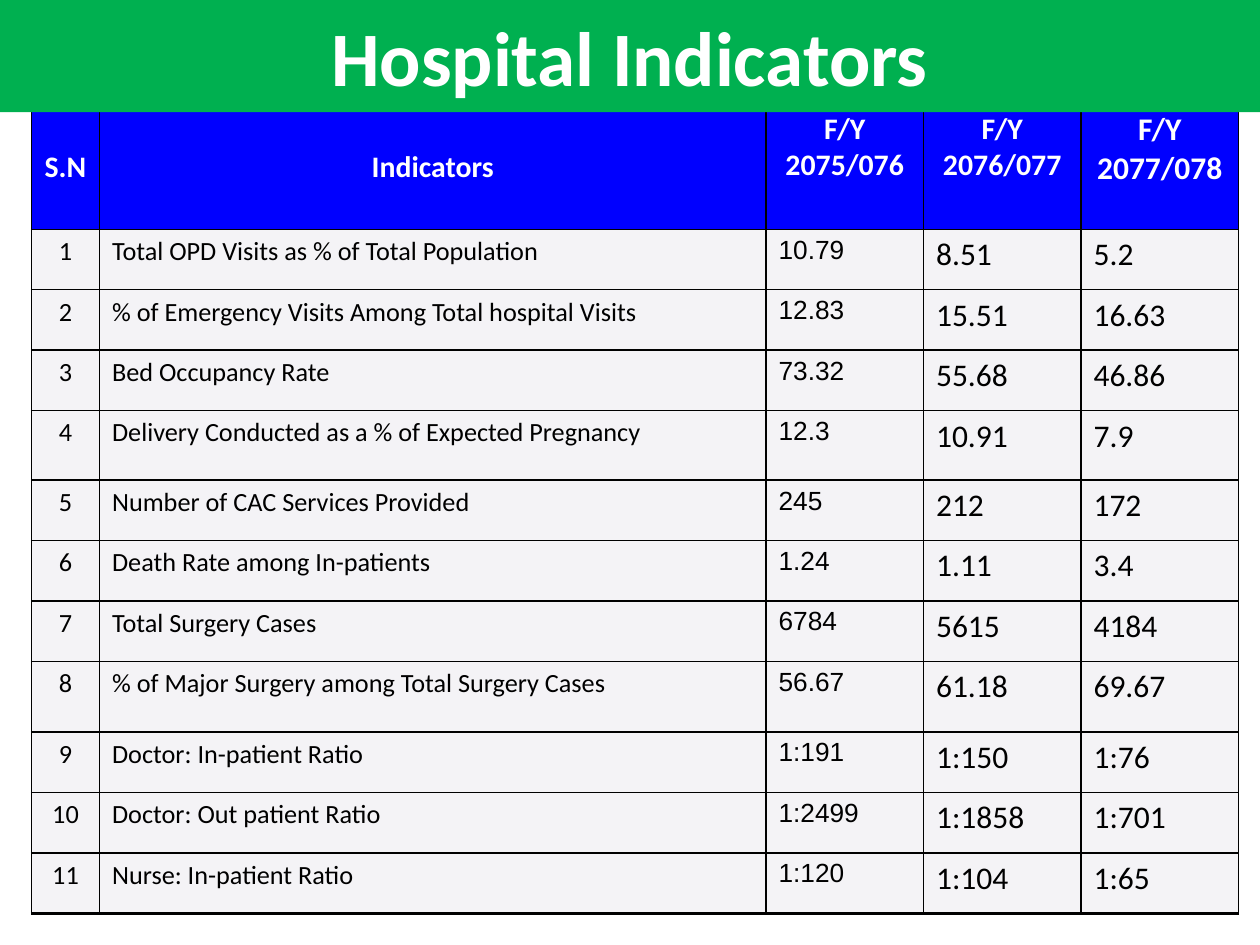
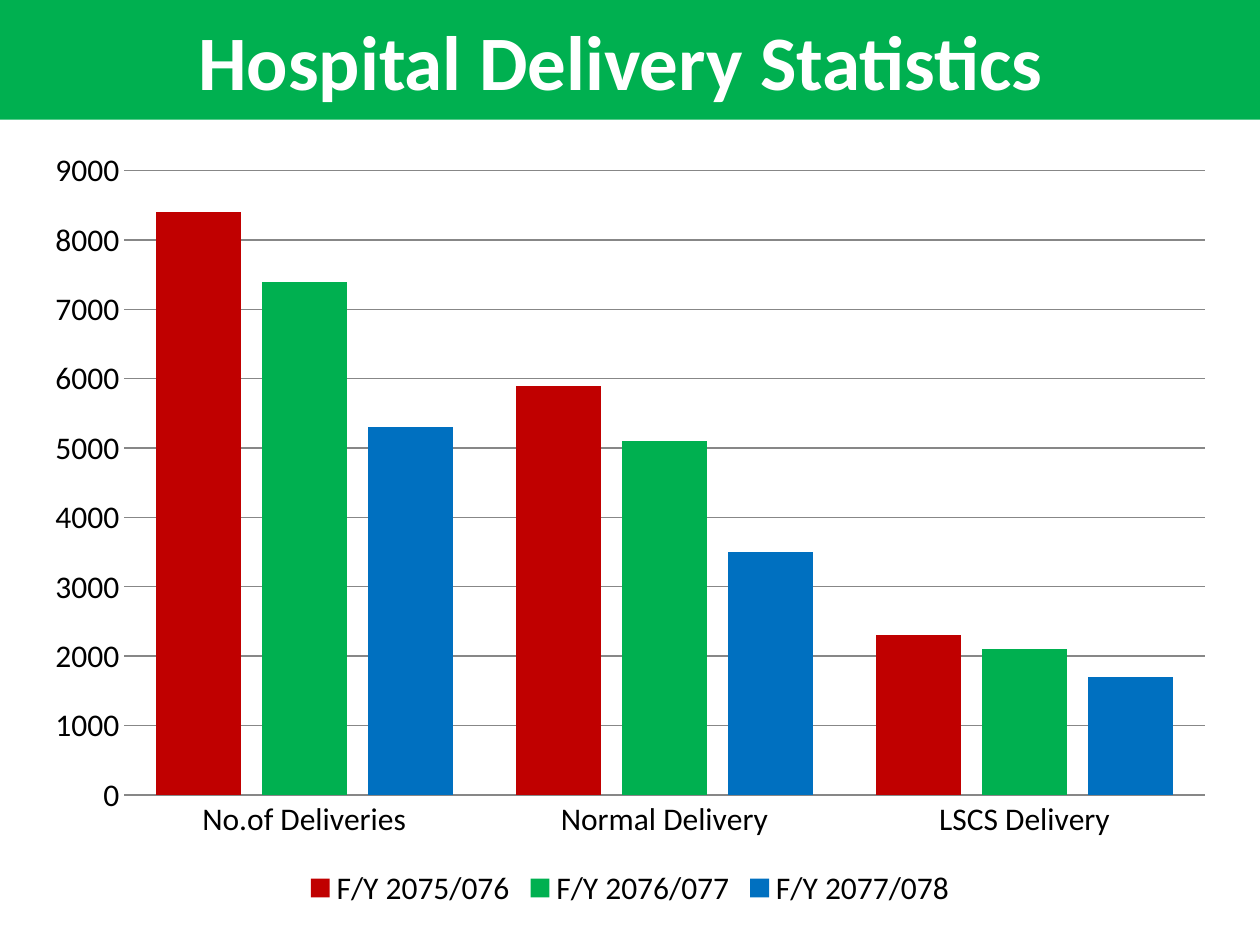
from pptx import Presentation
from pptx.chart.data import CategoryChartData
from pptx.dml.color import RGBColor
from pptx.enum.chart import XL_CHART_TYPE as ChartType
from pptx.enum.chart import XL_LEGEND_POSITION as LegendPosition
from pptx.enum.chart import XL_TICK_MARK as TickMark
from pptx.enum.text import MSO_ANCHOR as Anchor
from pptx.enum.text import MSO_AUTO_SIZE as AutoSize
from pptx.enum.text import PP_ALIGN as Align
from pptx.oxml import parse_xml
from pptx.oxml.ns import nsdecls
from pptx.util import Inches, Pt

# Shared look
GREEN, BLUE, PALE = "00B050", "0000FF", "F4F3F6"
WHITE, BLACK, GRID = "FFFFFF", "000000", "878787"
YEARS = ["2075/076", "2076/077", "2077/078"]
TITLE = {"name": "Calibri", "size": Pt(44), "bold": True, "color": WHITE}
HEADER = {"name": "Calibri", "size": Pt(17), "bold": True, "color": WHITE}
LABEL = {"name": "Calibri", "size": Pt(15), "bold": False, "color": BLACK}
VALUE = {**LABEL, "size": Pt(18)}


def rgb(color):
    return RGBColor.from_string(color)


def set_font(font, formats):
    for name, value in formats.items():
        if name == "color":
            font.color.rgb = rgb(value)
        else:
            setattr(font, name, value)


deck = Presentation()
deck.slide_width, deck.slide_height = Inches(10), Inches(7.5)

# Slides with a green title band
pages = []
for heading, height in [("Hospital Indicators", 0.89), ("Hospital Delivery Statistics ", 0.95)]:
    page = deck.slides.add_slide(deck.slide_layouts[5])
    band = page.shapes.title
    band.left, band.top, band.width, band.height = 0, 0, Inches(10), Inches(height)
    band.fill.solid()
    band.fill.fore_color.rgb = rgb(GREEN)
    frame = band.text_frame
    frame.text = heading
    frame.auto_size = AutoSize.NONE
    frame.vertical_anchor = Anchor.MIDDLE
    para = frame.paragraphs[0]
    para.alignment = Align.CENTER
    set_font(para.runs[0].font, TITLE)
    pages.append(page)
indicator_page, delivery_page = pages

# Indicator table
indicators = [
    ("Total OPD Visits as % of Total Population", "10.79", "8.51", "5.2"),
    ("% of Emergency Visits Among Total hospital Visits", "12.83", "15.51", "16.63"),
    ("Bed Occupancy Rate", "73.32", "55.68", "46.86"),
    ("Delivery Conducted as a % of Expected Pregnancy", "12.3", "10.91", "7.9"),
    ("Number of CAC Services Provided", "245", "212", "172"),
    ("Death Rate among In-patients", "1.24", "1.11", "3.4"),
    ("Total Surgery Cases", "6784", "5615", "4184"),
    ("% of Major Surgery among Total Surgery Cases", "56.67", "61.18", "69.67"),
    ("Doctor: In-patient Ratio", "1:191", "1:150", "1:76"),
    ("Doctor: Out patient Ratio", "1:2499", "1:1858", "1:701"),
    ("Nurse: In-patient Ratio", "1:120", "1:104", "1:65"),
]
rows = [["S.N", "Indicators"] + [f"F/Y\n{year}" for year in YEARS]]
rows += [[str(number), *row] for number, row in enumerate(indicators, 1)]
column_widths = [0.54, 5.29, 1.25, 1.25, 1.25]
tall_rows = {0: 0.99, 4: 0.55, 8: 0.56}
column_formats = [LABEL, LABEL, {**LABEL, "name": "Arial"}, VALUE, VALUE]

table_frame = indicator_page.shapes.add_table(
    len(rows), len(column_widths), Inches(0.25), Inches(0.83), Inches(9.58), Inches(6.43))
table = table_frame.table
table.first_row = table.horz_banding = False
for column, width in zip(table.columns, column_widths):
    column.width = Inches(width)

for row_index, row in enumerate(rows):
    table.rows[row_index].height = Inches(tall_rows.get(row_index, 0.48))
    is_header = row_index == 0
    for column_index, text in enumerate(row):
        cell = table.cell(row_index, column_index)
        cell.text = text
        cell.fill.solid()
        cell.fill.fore_color.rgb = rgb(BLUE if is_header else PALE)
        cell.vertical_anchor = Anchor.MIDDLE if is_header and column_index < 2 else Anchor.TOP
        formats = HEADER if is_header else column_formats[column_index]
        if is_header and column_index == 4:
            formats = {**HEADER, "size": Pt(18)}
        for para in cell.text_frame.paragraphs:
            para.alignment = Align.CENTER if is_header or column_index == 0 else Align.LEFT
            set_font(para.runs[0].font, formats)

        # Cell borders, heavier along the bottom of the table
        properties = cell._tc.get_or_add_tcPr()
        for position, side in enumerate("LRTB"):
            points = 2 if side == "B" and row_index == len(rows) - 1 else 1
            properties.insert(position, parse_xml(
                f'<a:ln{side} {nsdecls("a")} w="{Pt(points)}"><a:solidFill>'
                f'<a:srgbClr val="{BLACK}"/></a:solidFill></a:ln{side}>'))

# The title band lies over the top edge of the table
indicator_page.shapes.title._element.addprevious(table_frame._element)

# Delivery chart
deliveries = [(8400, 5900, 2300), (7400, 5100, 2100), (5300, 3500, 1700)]
chart_data = CategoryChartData()
chart_data.categories = ["No.of Deliveries", "Normal Delivery", "LSCS Delivery"]
for year, counts in zip(YEARS, deliveries):
    chart_data.add_series(f"F/Y {year}", counts)
chart = delivery_page.shapes.add_chart(
    ChartType.COLUMN_CLUSTERED, Inches(0.25), Inches(1.08), Inches(9.5), Inches(6.17),
    chart_data).chart
set_font(chart.font, VALUE)
chart.has_title = False

plot = chart.plots[0]
plot.gap_width, plot.overlap, plot.vary_by_categories = 75, -25, False
for series, color in zip(plot.series, ["C00000", GREEN, "0070C0"]):
    series.format.fill.solid()
    series.format.fill.fore_color.rgb = rgb(color)
    series.invert_if_negative = False

# Axes and legend
category_axis, value_axis = chart.category_axis, chart.value_axis
for axis in (category_axis, value_axis):
    axis.major_tick_mark = axis.minor_tick_mark = TickMark.NONE
    set_font(axis.tick_labels.font, VALUE)
value_axis.minimum_scale, value_axis.maximum_scale, value_axis.major_unit = 0, 9000, 1000
value_axis.has_major_gridlines = True
value_axis.format.line.fill.background()
for line in (category_axis.format.line, value_axis.major_gridlines.format.line):
    line.color.rgb = rgb(GRID)
    line.width = Pt(0.75)
chart.has_legend = True
chart.legend.position = LegendPosition.BOTTOM
chart.legend.include_in_layout = False
set_font(chart.legend.font, VALUE)

deck.save("out.pptx")
